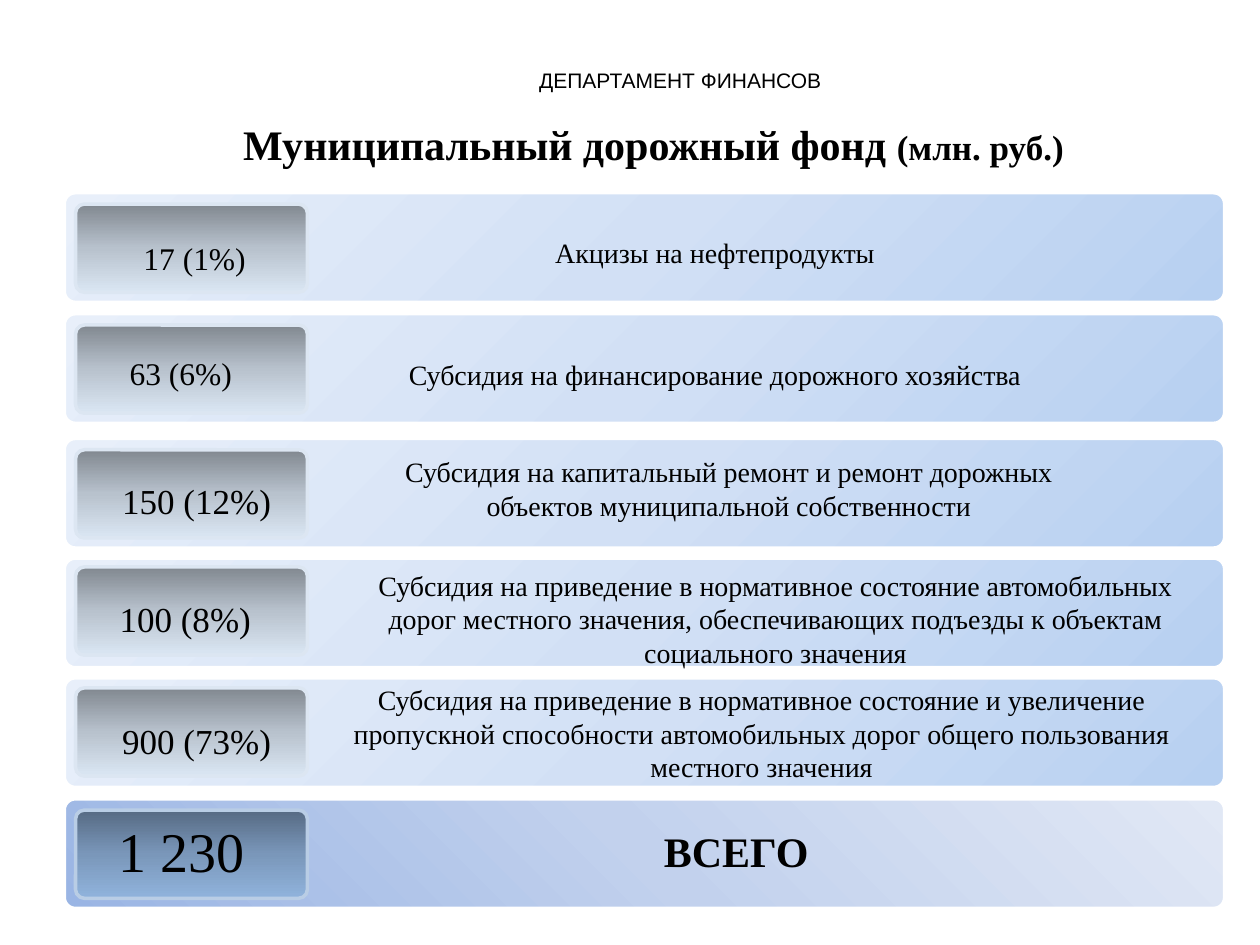
"""Build the municipal road fund slide with one bar per funding source."""
from pptx import Presentation
from pptx.dml.color import RGBColor
from pptx.enum.shapes import MSO_SHAPE
from pptx.enum.text import MSO_ANCHOR, MSO_AUTO_SIZE, PP_ALIGN
from pptx.oxml import parse_xml
from pptx.oxml.ns import nsdecls
from pptx.util import Inches, Pt

ROUNDED = MSO_SHAPE.ROUNDED_RECTANGLE
TOP = MSO_ANCHOR.TOP
FIT = MSO_AUTO_SIZE.SHAPE_TO_FIT_TEXT
LEFT, CENTER = PP_ALIGN.LEFT, PP_ALIGN.CENTER

COLORS = {"text": "000000", "bar_edge": "FFFFFF",
          "badge_edge": "DCE6F2", "total_edge": "B9CDE5"}
GRADIENTS = {
    "bar": ("B7D0F1", "D2E0F5", "E8EFFA"),
    "badge": ("818890", "B8C2CD", "DAE6F3"),
    "total_bar": ("9AB5E4", "C2D1ED", "E1E8F5"),
    "total_badge": ("566A83", "7A97BA", "90B3DC"),
}
CORNER_GLOW = ('<a:path path="circle"><a:fillToRect l="100000" t="100000"/>'
               '</a:path>')
DOWNWARD = '<a:lin ang="5400000" scaled="0"/>'
DIAGONAL = '<a:lin ang="18900000" scaled="0"/>'
SERIF, SANS = "Times New Roman", "Arial"

BAR_LEFT, BAR_WIDTH, BAR_HEIGHT = 5.1, 92.1, 8.7
BADGE_LEFT, BADGE_WIDTH, BADGE_HEIGHT = 6, 18.4, 7

SOURCES = [
    (15.3, 16.2, "17 (1%)", (10.4, 18.5, 10.2, 4), 18,
     "Акцизы на нефтепродукты", (42.9, 18.2, 27.7, 3.7)),
    (24.9, 25.8, "63 (6%)", (9.3, 27.6, 10.2, 4), 18,
     "Субсидия на финансирование дорожного хозяйства",
     (31.1, 27.9, 51.3, 3.7)),
    (34.8, 35.7, "150 (12%)", (8.7, 37.6, 13.9, 4.4), 20,
     "Субсидия на капитальный ремонт и ремонт дорожных\n"
     "объектов муниципальной собственности", (30.8, 35.6, 54.1, 6.4)),
    (44.3, 45, "100 (8%)", (8.5, 46.9, 12.5, 4.4), 20,
     "Субсидия на приведение в нормативное состояние автомобильных\n"
     "дорог местного значения, обеспечивающих подъезды к объектам\n"
     "социального значения", (28.6, 44.6, 65.9, 9.1)),
    (53.8, 54.6, "900 (73%)", (8.7, 56.6, 13.9, 4.4), 20,
     "Субсидия на приведение в нормативное состояние и увеличение\n"
     "пропускной способности автомобильных дорог общего пользования\n"
     "местного значения", (26.3, 53.7, 68.3, 9.1)),
]


class FundSlide:
    """Draw styled elements on a grid of 100 columns by 75 rows."""

    def __init__(self, presentation):
        self.column = presentation.slide_width / 100
        self.row = presentation.slide_height / 75
        self.slide = presentation.slides.add_slide(
            presentation.slide_layouts[5])

    def place(self, left, top, width, height):
        """Convert grid cells to slide lengths."""
        return (round(left * self.column), round(top * self.row),
                round(width * self.column), round(height * self.row))

    def panel(self, area, gradient, direction, edge):
        """Add a rounded panel with a three-stop gradient."""
        panel = self.slide.shapes.add_shape(ROUNDED, *self.place(*area))
        panel.adjustments[0] = 0.1
        panel.shadow.inherit = False
        panel.fill.background()
        stops = "".join(
            f'<a:gs pos="{step * 50000}"><a:srgbClr val="{color}"/></a:gs>'
            for step, color in enumerate(GRADIENTS[gradient]))
        properties = panel.element.spPr
        properties.replace(
            properties.find("{*}noFill"),
            parse_xml(f'<a:gradFill {nsdecls("a")} rotWithShape="1">'
                      f'<a:gsLst>{stops}</a:gsLst>{direction}</a:gradFill>'))
        panel.line.color.rgb = RGBColor.from_string(COLORS[edge])
        panel.line.width = Pt(2)

    def style(self, run, size, bold=False, font=SERIF):
        """Apply the slide's text style to a run."""
        run.font.name = font
        run.font.size = Pt(size)
        run.font.bold = bold
        run.font.color.rgb = RGBColor.from_string(COLORS["text"])

    def title(self, area, name, unit):
        """Fill the title placeholder with a name and a smaller unit."""
        heading = self.slide.shapes.title
        heading.left, heading.top, heading.width, heading.height = (
            self.place(*area))
        frame = heading.text_frame
        frame.vertical_anchor = TOP
        frame.word_wrap = True
        frame.auto_size = FIT
        paragraph = frame.paragraphs[0]
        paragraph.alignment = LEFT
        for wording, size in ((name, 24), (unit, 20)):
            run = paragraph.add_run()
            run.text = wording
            self.style(run, size, bold=True)

    def label(self, area, wording, size, align=LEFT, bold=False, font=SERIF,
              wrap=False):
        """Add a text box with one paragraph per line."""
        frame = self.slide.shapes.add_textbox(*self.place(*area)).text_frame
        frame.word_wrap = wrap
        frame.auto_size = FIT
        frame.text = wording
        for paragraph in frame.paragraphs:
            paragraph.alignment = align
            self.style(paragraph.runs[0], size, bold, font)

    def bar(self, top, badge_top, prefix="", direction=CORNER_GLOW,
            badge_edge="badge_edge"):
        """Add a bar with the badge that carries its amount."""
        self.panel((BAR_LEFT, top, BAR_WIDTH, BAR_HEIGHT),
                   prefix + "bar", direction, "bar_edge")
        self.panel((BADGE_LEFT, badge_top, BADGE_WIDTH, BADGE_HEIGHT),
                   prefix + "badge", DOWNWARD, badge_edge)


def main():
    """Compose and save the slide."""
    presentation = Presentation()
    presentation.slide_width = Inches(10)
    presentation.slide_height = Inches(7.5)
    fund = FundSlide(presentation)
    fund.label((9.1, 4.9, 89.8, 3), "ДЕПАРТАМЕНТ ФИНАНСОВ", 12, CENTER,
               font=SANS, wrap=True)
    fund.title((18.3, 8.9, 71.5, 5), "Муниципальный дорожный фонд ",
               "(млн. руб.)")
    for top, badge_top, amount, amount_area, size, source, area in SOURCES:
        fund.bar(top, badge_top)
        fund.label(amount_area, amount, size)
        fund.label(area, source, 16, CENTER)
    fund.bar(63.4, 64.3, "total_", DIAGONAL, "total_edge")
    fund.label((8.4, 64.3, 12.1, 6.4), "1 230", 32)
    fund.label((51.7, 65, 13.6, 5), "ВСЕГО", 24, bold=True)
    presentation.save("out.pptx")


if __name__ == "__main__":
    main()
